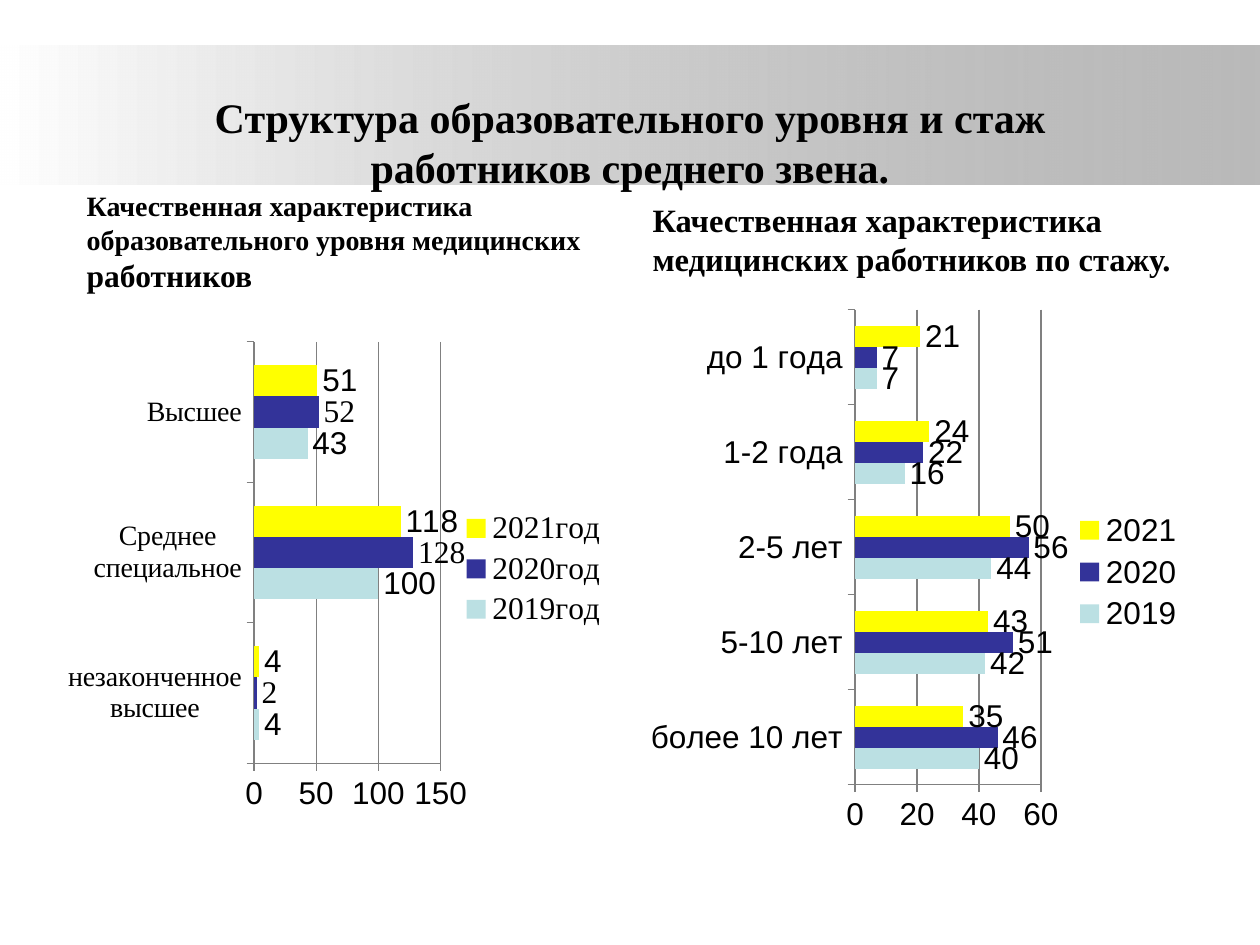
from lxml import etree
from pptx import Presentation
from pptx.chart.data import CategoryChartData
from pptx.dml.color import RGBColor
from pptx.enum.chart import XL_CHART_TYPE as CT, XL_LABEL_POSITION as LP
from pptx.enum.chart import XL_LEGEND_POSITION as LG, XL_TICK_MARK as TM
from pptx.enum.shapes import MSO_SHAPE
from pptx.enum.text import MSO_ANCHOR as MA, PP_ALIGN as PA
from pptx.oxml import parse_xml
from pptx.oxml.ns import nsdecls, qn
from pptx.util import Pt

COLORS = {"text": "000000", "white": "FFFFFF", "gray": "808080",
          "2019": "BBE0E3", "2020": "333399", "2021": "FFFF00"}
SERIF, SANS = "Times New Roman", "Arial"


def set_font(font, name, size, bold=False):
    font.name, font.size, font.bold = name, Pt(size), bold
    font.color.rgb = RGBColor.from_string(COLORS["text"])


def add_text(box, runs, anchor, align):
    """Add a bold one-paragraph text box; runs are (text, size) pairs."""
    tf = s.shapes.add_textbox(*map(Pt, box)).text_frame
    tf.word_wrap = True
    tf.vertical_anchor = anchor
    p = tf.paragraphs[0]
    p.alignment = align
    for text, size in runs:
        r = p.add_run()
        r.text = text
        set_font(r.font, SERIF, size, True)


prs = Presentation()
prs.slide_width, prs.slide_height = Pt(720), Pt(540)
s = prs.slides.add_slide(prs.slide_layouts[6])

# Title band fading from white to translucent gray
band = s.shapes.add_shape(MSO_SHAPE.RECTANGLE, Pt(0), Pt(25.9), Pt(720), Pt(79.5))
band.shadow.inherit = False
band.line.fill.background()
band.fill.gradient()
band.fill.gradient_angle = 0
for stop, key in zip(band.fill.gradient_stops, ("white", "gray")):
    stop.color.rgb = RGBColor.from_string(COLORS[key])
end_color = list(band._element.spPr.iter(qn("a:srgbClr")))[-1]
etree.SubElement(end_color, qn("a:alpha"), val="54000")

add_text((49.7, 28.8, 620.6, 104.4),
         [("Структура образовательного уровня и стаж работников среднего звена.", 24)],
         MA.MIDDLE, PA.CENTER)
add_text((42.5, 121, 311.8, 50.4),
         [("Качественная характеристика образовательного уровня медицинских ", 16),
          ("работников", 18)], MA.BOTTOM, PA.LEFT)
add_text((365.8, 100, 318.2, 62.7),
         [("Качественная характеристика медицинских работников по стажу.", 18.6)],
         MA.BOTTOM, PA.LEFT)

charts = [
    dict(box=(36.7, 179.3, 318.2, 291.6), plot=(0.341, 0.055, 0.335, 0.826),
         cats=["незаконченное высшее", "Среднее специальное", "Высшее"],
         series={"2019год": (4, 100, 43), "2020год": (2, 128, 52), "2021год": (4, 118, 51)},
         cat_font=(SERIF, 16), legend_font=SERIF, label_fonts=(SANS, SERIF, SANS),
         top=150, step=50),
    dict(box=(365.8, 171.4, 318.2, 311), plot=(0.386, 0.018, 0.334, 0.873),
         cats=["более 10 лет", "5-10 лет", "2-5 лет", "1-2 года", "до 1 года"],
         series={"2019": (40, 42, 44, 16, 7), "2020": (46, 51, 56, 22, 7),
                 "2021": (35, 43, 50, 24, 21)},
         cat_font=(SANS, 18), legend_font=SANS, label_fonts=(SANS,) * 3,
         top=60, step=20),
]
for c in charts:
    data = CategoryChartData()
    data.categories = c["cats"]
    for name, vals in c["series"].items():
        data.add_series(name, vals)
    chart = s.shapes.add_chart(CT.BAR_CLUSTERED, *map(Pt, c["box"]), data).chart
    chart.has_title = False
    set_font(chart.font, SANS, 18)

    chart.has_legend = True
    chart.legend.position = LG.RIGHT
    chart.legend.include_in_layout = False
    set_font(chart.legend.font, c["legend_font"], 18)

    cat, val = chart.category_axis, chart.value_axis
    set_font(cat.tick_labels.font, *c["cat_font"])
    set_font(val.tick_labels.font, SANS, 18)
    val.minimum_scale, val.maximum_scale, val.major_unit = 0, c["top"], c["step"]
    val.has_major_gridlines = True
    for axis in (cat, val):
        axis.major_tick_mark = TM.OUTSIDE
    for line in (cat.format.line, val.format.line, val.major_gridlines.format.line):
        line.color.rgb = RGBColor.from_string(COLORS["gray"])
        line.width = Pt(0.75)

    plot = chart.plots[0]
    plot.gap_width, plot.overlap, plot.vary_by_categories = 150, 0, False
    for ser, label_font in zip(plot.series, c["label_fonts"]):
        ser.format.fill.solid()
        ser.format.fill.fore_color.rgb = RGBColor.from_string(COLORS[ser.name[:4]])
        labels = ser.data_labels
        labels.show_value = True
        labels.position = LP.OUTSIDE_END
        set_font(labels.font, label_font, 18)

    # Fixed inner plot area, as fractions of the chart
    area = chart._chartSpace.chart.plotArea
    for old in area.findall(qn("c:layout")):
        area.remove(old)
    x, y, w, h = c["plot"]
    area.insert(0, parse_xml(
        f'<c:layout {nsdecls("c")}><c:manualLayout><c:layoutTarget val="inner"/>'
        '<c:xMode val="edge"/><c:yMode val="edge"/>'
        f'<c:x val="{x}"/><c:y val="{y}"/><c:w val="{w}"/><c:h val="{h}"/>'
        '</c:manualLayout></c:layout>'))

prs.save("out.pptx")
